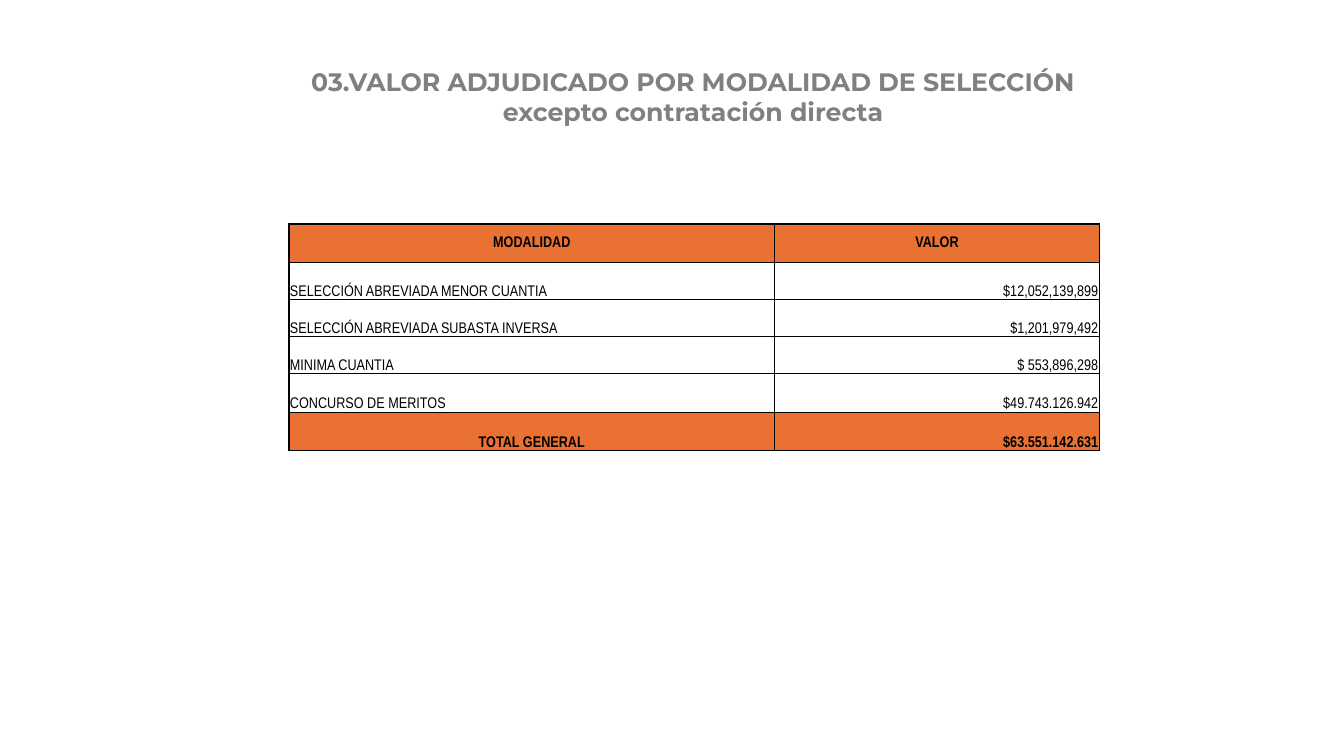
from lxml import etree
from pptx import Presentation
from pptx import util as u
from pptx.dml.color import RGBColor
from pptx.enum import text
from pptx.oxml import ns

ORANGE = RGBColor(0xE9, 0x71, 0x32)
GRAY = RGBColor(0x80, 0x80, 0x80)
BLACK = RGBColor(0, 0, 0)
LEFT, CENTER, RIGHT = text.PP_ALIGN.LEFT, text.PP_ALIGN.CENTER, text.PP_ALIGN.RIGHT

TITLE = "03.VALOR ADJUDICADO POR MODALIDAD DE SELECCIÓN\nexcepto contratación directa"
ROWS = [
    ("MODALIDAD", "VALOR"),
    ("SELECCIÓN ABREVIADA MENOR CUANTIA", "$12,052,139,899"),
    ("SELECCIÓN ABREVIADA SUBASTA INVERSA", "$1,201,979,492"),
    ("MINIMA CUANTIA", "$ 553,896,298"),
    ("CONCURSO DE MERITOS", "$49.743.126.942"),
    ("TOTAL GENERAL", "$63.551.142.631"),
]
COL_WIDTHS = [347.04, 231.84]
ROW_HEIGHTS = [27.5, 26.5, 26.5, 26.5, 27.5, 27.5]


class Deck:
    """Holds the text style and the current slide."""

    def __init__(self, prs):
        self.s = prs.slides.add_slide(prs.slide_layouts[6])
        self.title_font = "Montserrat"
        self.table_font = "Arial Narrow"

    def set_text(self, tf, content, align, font, size, color, bold):
        tf.text = content
        for p in tf.paragraphs:
            p.alignment = align
            for r in p.runs:
                r.font.name = font
                r.font.size = u.Pt(size)
                r.font.bold = bold
                r.font.color.rgb = color

    def title(self, content, x, y, w, h):
        sp = self.s.shapes.add_textbox(u.Pt(x), u.Pt(y), u.Pt(w), u.Pt(h))
        sp.text_frame.word_wrap = True
        self.set_text(sp.text_frame, content, CENTER, self.title_font, 18, GRAY, True)

    def border(self, cell, side, width):
        tc_pr = cell._tc.get_or_add_tcPr()
        ln = etree.SubElement(tc_pr, ns.qn(f"a:ln{side}"), w=str(u.Pt(width)))
        fill = etree.SubElement(ln, ns.qn("a:solidFill"))
        etree.SubElement(fill, ns.qn("a:srgbClr"), val=str(BLACK))

    def cell(self, cell, content, row, col, last):
        strong = row in (0, last)
        outer = {"L": col == 0, "R": col == 1, "T": row == 1, "B": row == last - 1}
        for side, edge in outer.items():
            self.border(cell, side, 1 if strong or edge else 0.5)
        if strong:
            cell.fill.solid()
            cell.fill.fore_color.rgb = ORANGE
        else:
            cell.fill.background()
        cell.margin_left = cell.margin_right = cell.margin_top = u.Pt(0.72)
        cell.margin_bottom = u.Pt(0)
        cell.vertical_anchor = text.MSO_ANCHOR.MIDDLE if row == 0 else text.MSO_ANCHOR.BOTTOM
        if row == 0 or (strong and col == 0):
            align = CENTER
        else:
            align = RIGHT if col else LEFT
        self.set_text(cell.text_frame, content, align, self.table_font, 11, BLACK, strong)

    def table(self, rows, x, y, widths, heights):
        frame = self.s.shapes.add_table(
            len(rows), len(widths), u.Pt(x), u.Pt(y), u.Pt(sum(widths)), u.Pt(sum(heights))
        )
        tbl = frame.table
        tbl.first_row = tbl.horz_banding = False
        for column, width in zip(tbl.columns, widths):
            column.width = u.Pt(width)
        for i, (values, height) in enumerate(zip(rows, heights)):
            tbl.rows[i].height = u.Pt(height)
            for j, value in enumerate(values):
                self.cell(tbl.cell(i, j), value, i, j, len(rows) - 1)


def main():
    prs = Presentation()
    prs.slide_width, prs.slide_height = u.Pt(960), u.Pt(540)
    deck = Deck(prs)
    deck.title(TITLE, 151.2, 43.92, 687.6, 51.12)
    deck.table(ROWS, 206.4, 160, COL_WIDTHS, ROW_HEIGHTS)
    prs.save("out.pptx")


if __name__ == "__main__":
    main()
